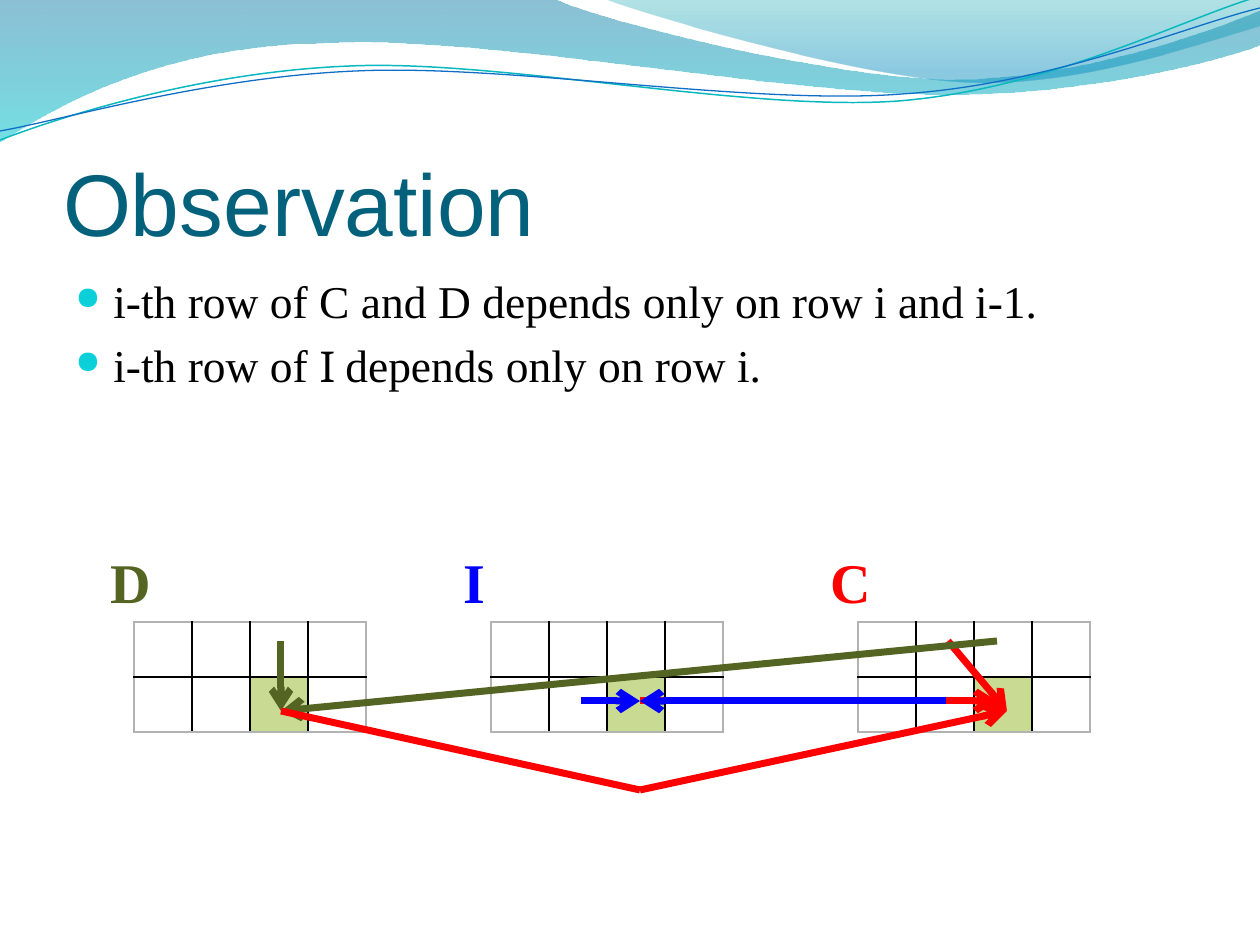
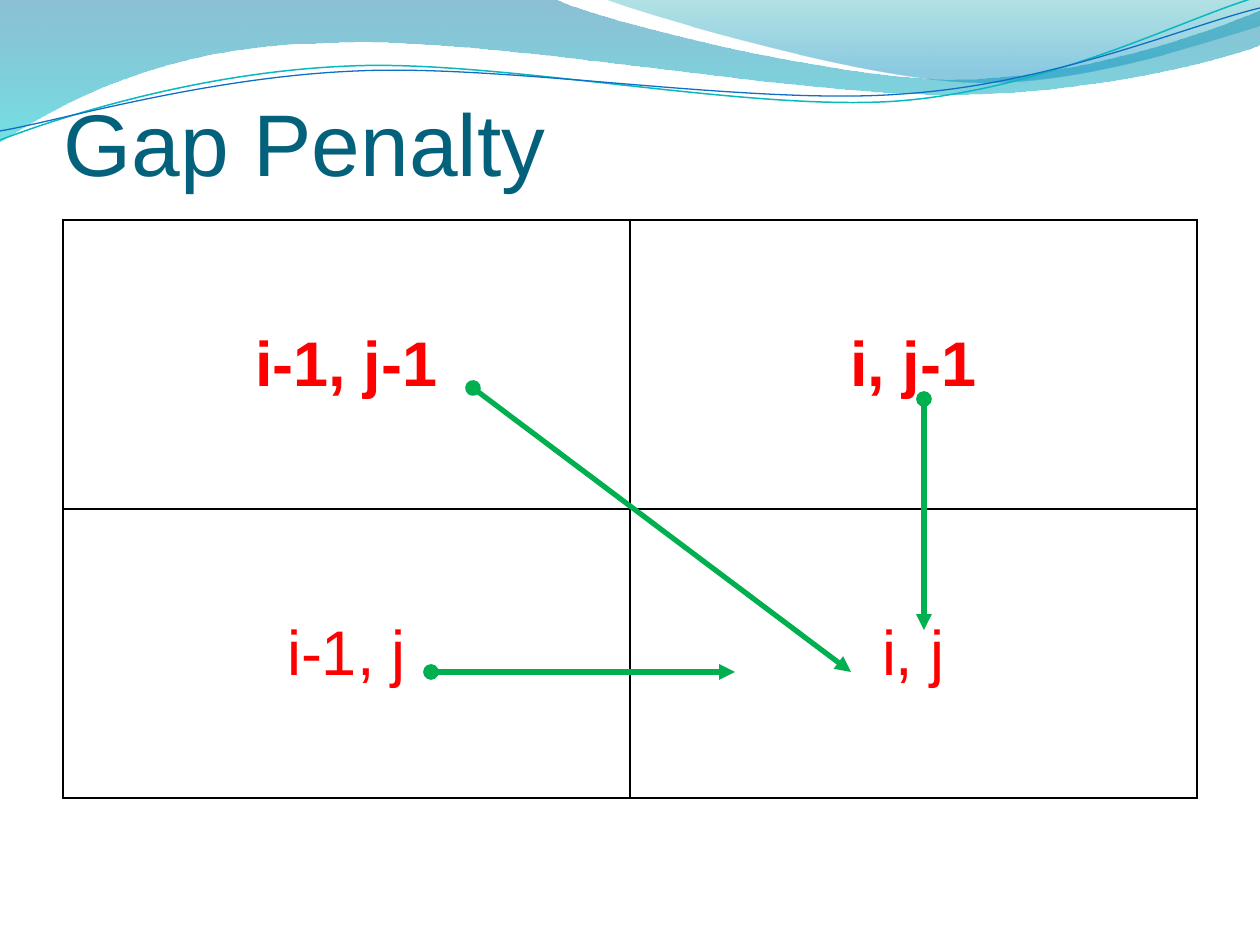
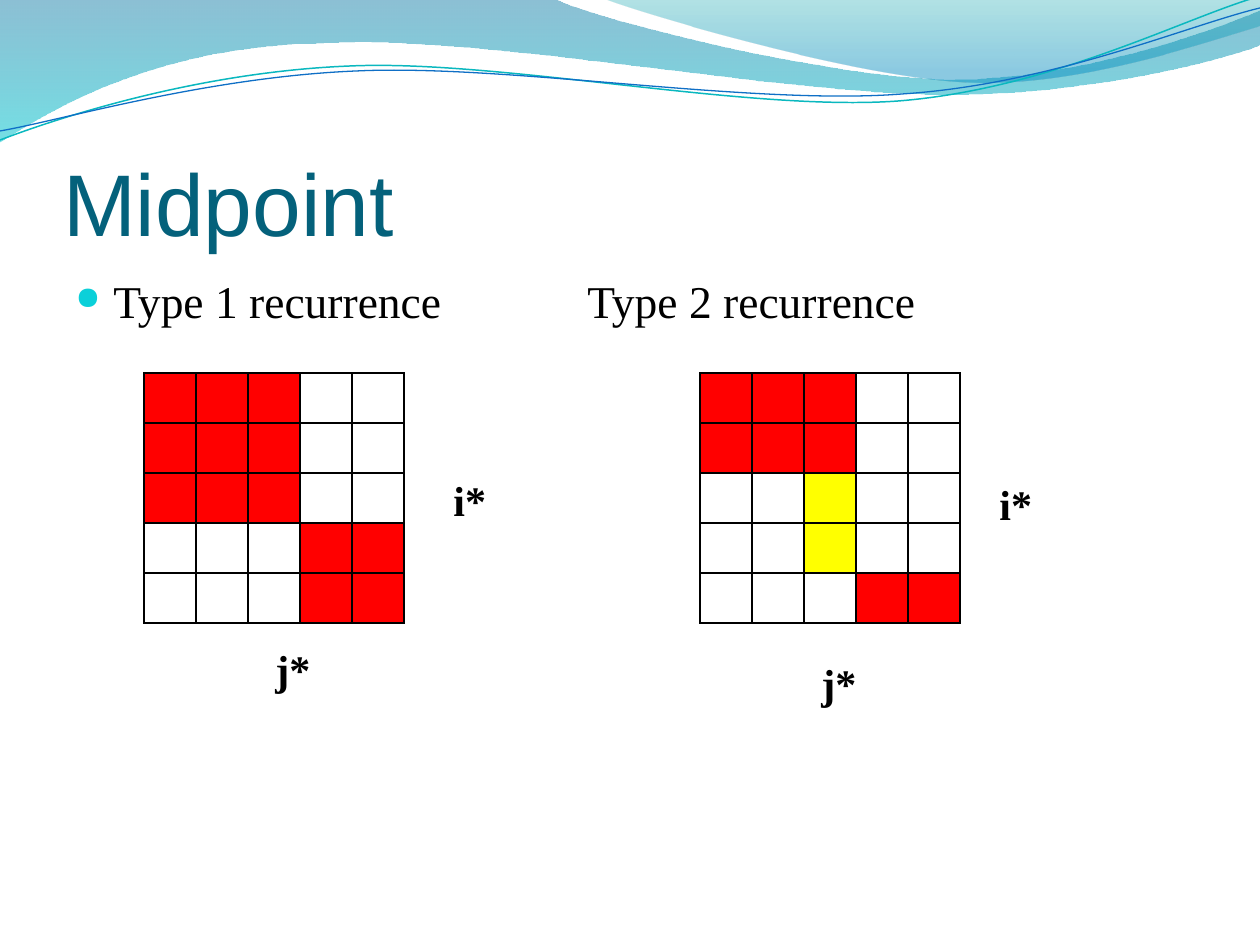
from lxml.etree import SubElement
from pptx import Presentation
from pptx.dml.color import RGBColor
from pptx.enum.shapes import MSO_CONNECTOR
from pptx.enum.text import MSO_ANCHOR, MSO_AUTO_SIZE, PP_ALIGN
from pptx.oxml import parse_xml
from pptx.oxml.ns import nsdecls, qn
from pptx.util import Pt

EMU_PER_PIXEL = 914400 / 126
SLIDE_WIDTH, SLIDE_HEIGHT = 1260, 945
SERIF, SANS, SYMBOL_FONT = "Times New Roman", "Arial", "Cambria"

COLORS = {
    "title": "04617B",
    "bullet": "0BD0D9",
    "black": "000000",
    "white": "FFFFFF",
    "red": "FF0000",
    "yellow": "FFFF00",
    "blue": "0000FF",
    "olive": "546422",
    "light_green": "C9DA92",
    "green": "00B050",
    "gray": "B2B2B2",
    "wave_blue": "0074A1",
    "wave_cyan": "00C6CF",
    "crest_teal": "00A1A9",
    "crest_blue": "008BBF",
    "teal_line": "0AB8BF",
    "blue_line": "0F6FC6",
}

CELL_COLORS = {"R": "red", "W": "white", "Y": "yellow", "G": "light_green"}

WAVE_FILLS = [
    ([(0, 0), [(554, -1)],
      [(600, 21), (837, 79), (955, 79)], [(1075, 79), (1207, 33), (1260, 11)],
      [(1261, 45)],
      [(1237, 55), (1096, 96), (940, 94)], [(781, 94), (481, 35), (324, 43)],
      [(163, 45), (58, 105), (-1, 142)], [(0, 0)]],
     [(0, "wave_blue", 45), (1, "wave_cyan", 55)]),
    ([(604, -1),
      [(641, 14), (859, 78), (969, 82)], [(1079, 87), (1211, 40), (1260, 26)],
      [(1260, 0)], [(604, -1)]],
     [(0, "crest_teal", 30), (0.8, "crest_blue", 45)]),
]

WAVE_LINES = [
    ([(0, 140),
      [(60, 117), (199, 72), (349, 66)], [(498, 59), (747, 112), (898, 101)],
      [(1050, 89), (1182, 19), (1257, -3)]],
     "teal_line", 0.85),
    ([(0, 131),
      [(59, 121), (207, 77), (357, 71)], [(508, 64), (752, 106), (903, 94)],
      [(1053, 84), (1186, 26), (1260, 8)]],
     "blue_line", 0.75),
]


def px(value):
    return round(value * EMU_PER_PIXEL)


def rgb(name):
    return RGBColor.from_string(COLORS[name])


def bend_segments(shape, segments):
    corners = list(shape.element.iter(qn("a:lnTo")))
    for segment in segments:
        group, corners = corners[:len(segment)], corners[len(segment):]
        if len(segment) == 3:
            curve = parse_xml(f'<a:cubicBezTo {nsdecls("a")}/>')
            group[0].addprevious(curve)
            for corner in group:
                curve.append(corner[0])
                corner.getparent().remove(corner)


def add_outline(slide, outline, close):
    start, *segments = outline
    points = [(px(x), px(y)) for segment in segments for x, y in segment]
    builder = slide.shapes.build_freeform(px(start[0]), px(start[1]), scale=1.0)
    builder.add_line_segments(points, close=close)
    shape = builder.convert_to_shape()
    bend_segments(shape, segments)
    shape.shadow.inherit = False
    return shape


def add_wave_fill(slide, outline, stops):
    shape = add_outline(slide, outline, True)
    shape.line.fill.background()
    shape.fill.gradient()
    shape.fill.gradient_angle = 270
    for stop, (position, color, _) in zip(shape.fill.gradient_stops, stops):
        stop.position = position
        stop.color.rgb = rgb(color)
    for element, (_, _, opacity) in zip(shape.element.spPr.iter(qn("a:srgbClr")), stops):
        SubElement(element, qn("a:alpha"), val=str(opacity * 1000))
    return shape


def add_wave_line(slide, outline, color, width):
    shape = add_outline(slide, outline, False)
    shape.fill.background()
    shape.line.color.rgb = rgb(color)
    shape.line.width = Pt(width)
    return shape


def move_waves_to_layout(slide):
    waves = [add_wave_fill(slide, *wave) for wave in WAVE_FILLS]
    waves += [add_wave_line(slide, *wave) for wave in WAVE_LINES]
    for shape in waves:
        slide.slide_layout.shapes.element.append(shape.element)


def add_run(paragraph, text, size=26, font=SERIF, color="black", bold=False):
    run = paragraph.add_run()
    run.text = text
    run.font.size = Pt(size)
    run.font.name = font
    run.font.bold = bold
    run.font.color.rgb = rgb(color)


def add_title_slide(presentation, title, left=63, top=96):
    slide = presentation.slides.add_slide(presentation.slide_layouts[5])
    shape = slide.shapes.title
    shape.left, shape.top, shape.width, shape.height = px(left), px(top), px(1134), px(158)
    frame = shape.text_frame
    frame.auto_size = MSO_AUTO_SIZE.NONE
    frame.vertical_anchor = MSO_ANCHOR.BOTTOM
    frame.margin_left = frame.margin_right = frame.margin_bottom = 0
    frame.margin_top = px(6)
    frame.paragraphs[0].alignment = PP_ALIGN.LEFT
    add_run(frame.paragraphs[0], title, size=50, font=SANS, color="title")
    return slide


def add_text_box(slide, left, top, width, height):
    frame = slide.shapes.add_textbox(px(left), px(top), px(width), px(height)).text_frame
    frame.word_wrap = True
    return frame


def add_label(slide, text, left, top, width, height, **text_format):
    frame = add_text_box(slide, left, top, width, height)
    frame.auto_size = MSO_AUTO_SIZE.SHAPE_TO_FIT_TEXT
    add_run(frame.paragraphs[0], text, **text_format)


def format_bullet(paragraph, tab):
    paragraph.space_before = Pt(5.2)
    properties = paragraph._p.get_or_add_pPr()
    properties.set("marL", str(px(38)))
    properties.set("indent", str(-px(38)))
    color = SubElement(properties, qn("a:buClr"))
    SubElement(color, qn("a:srgbClr"), val=COLORS["bullet"])
    SubElement(properties, qn("a:buSzPct"), val="70000")
    SubElement(properties, qn("a:buChar"), char="●")
    if tab:
        tabs = SubElement(properties, qn("a:tabLst"))
        SubElement(tabs, qn("a:tab"), pos=str(px(tab)), algn="l")


def add_bullets(slide, bullets, tab=None):
    frame = add_text_box(slide, 63, 267, 1134, 605)
    for index, runs in enumerate(bullets):
        paragraph = frame.add_paragraph() if index else frame.paragraphs[0]
        format_bullet(paragraph, tab)
        for text, font in runs:
            add_run(paragraph, text, font=font)


def set_borders(cell, colors):
    properties = cell._tc.get_or_add_tcPr()
    for index, (side, color) in enumerate(zip("LRTB", colors)):
        properties.insert(index, parse_xml(
            f'<a:ln{side} {nsdecls("a")} w="12700"><a:solidFill>'
            f'<a:srgbClr val="{COLORS[color]}"/></a:solidFill></a:ln{side}>'))


def add_grid(slide, left, top, cell_width, cell_height, pattern, outer="black"):
    row_count, column_count = len(pattern), len(pattern[0])
    table = slide.shapes.add_table(
        row_count, column_count, px(left), px(top),
        px(cell_width * column_count), px(cell_height * row_count)).table
    table.first_row = table.horz_banding = False
    for column in table.columns:
        column.width = px(cell_width)
    for row_index, row in enumerate(table.rows):
        row.height = px(cell_height)
        for column_index, cell in enumerate(row.cells):
            cell.margin_left = cell.margin_right = cell.margin_top = cell.margin_bottom = 0
            cell.vertical_anchor = MSO_ANCHOR.MIDDLE
            mark = pattern[row_index][column_index]
            if mark in CELL_COLORS:
                cell.fill.solid()
                cell.fill.fore_color.rgb = rgb(CELL_COLORS[mark])
            else:
                cell.fill.background()
            on_edge = (column_index == 0, column_index == column_count - 1,
                       row_index == 0, row_index == row_count - 1)
            set_borders(cell, [outer if edge else "black" for edge in on_edge])
    return table


def add_arrow(slide, start, end, color, width=4, head=None, tail="arrow"):
    connector = slide.shapes.add_connector(
        MSO_CONNECTOR.STRAIGHT, *map(px, start), *map(px, end))
    connector.line.color.rgb = rgb(color)
    connector.line.width = Pt(width)
    line = connector.line._get_or_add_ln()
    for tag, kind in (("a:headEnd", head), ("a:tailEnd", tail)):
        if kind:
            SubElement(line, qn(tag), type=kind)
    SubElement(connector.element.spPr, qn("a:effectLst"))


def build_observation(presentation):
    slide = add_title_slide(presentation, "Observation")
    move_waves_to_layout(slide)
    add_bullets(slide, [
        [("i-th row of C and D depends only on row i and i-1.", SERIF)],
        [("i-th row of ", SERIF), ("I ", SYMBOL_FONT), ("depends only on row i.", SERIF)],
    ])
    for left in (134, 491, 858):
        add_grid(slide, left, 622, 58, 55, ["....", "..G."], outer="gray")
    for text, left, width, color in (("C", 818, 139, "red"), ("D", 98, 110, "olive"),
                                     ("I", 451, 110, "blue")):
        add_label(slide, text, left, 541, width, 81, size=32, color=color, bold=True)
    cell_d, cell_i, cell_c, bend = (281, 711), (640, 701), (1007, 711), (640, 790)
    add_arrow(slide, (281, 641), cell_d, "olive")
    add_arrow(slide, (581, 701), cell_i, "blue")
    add_arrow(slide, (948, 641), cell_c, "red")
    add_arrow(slide, cell_i, (997, 701), "red")
    add_arrow(slide, (946, 701), cell_i, "blue")
    add_arrow(slide, (997, 641), cell_d, "olive")
    add_arrow(slide, bend, cell_c, "red")
    add_arrow(slide, cell_d, bend, "red", tail=None)


def build_gap_penalty(presentation):
    slide = add_title_slide(presentation, "Gap Penalty", left=64, top=36)
    table = add_grid(slide, 63, 220, 567, 289, ["..", ".."])
    labels = [["i-1, j-1", "i, j-1"], ["i-1, j", "i, j"]]
    for row_index, row in enumerate(labels):
        for column_index, text in enumerate(row):
            paragraph = table.cell(row_index, column_index).text_frame.paragraphs[0]
            paragraph.alignment = PP_ALIGN.CENTER
            add_run(paragraph, text, size=36, font=SANS, color="red", bold=row_index == 0)
    for start, end in (((473, 388), (851, 672)), ((924, 399), (924, 630)),
                       ((431, 672), (735, 672))):
        add_arrow(slide, start, end, "green", width=3, head="oval", tail="triangle")


def build_midpoint(presentation):
    slide = add_title_slide(presentation, "Midpoint")
    add_bullets(slide, [[("Type 1 recurrence\tType 2 recurrence", SERIF)]], tab=512)
    add_grid(slide, 144, 373, 52, 50, ["RRRWW"] * 3 + ["WWWRR"] * 2)
    add_grid(slide, 700, 373, 52, 50, ["RRRWW"] * 2 + ["WWYWW"] * 2 + ["WWWRR"])
    for text, left, top in (("i*", 441, 468), ("j*", 263, 637),
                            ("i*", 987, 472), ("j*", 809, 651)):
        add_label(slide, text, left, top, 79, 63, size=24, bold=True)


def main():
    presentation = Presentation()
    presentation.slide_width = px(SLIDE_WIDTH)
    presentation.slide_height = px(SLIDE_HEIGHT)
    build_observation(presentation)
    build_gap_penalty(presentation)
    build_midpoint(presentation)
    presentation.save("out.pptx")


if __name__ == "__main__":
    main()
